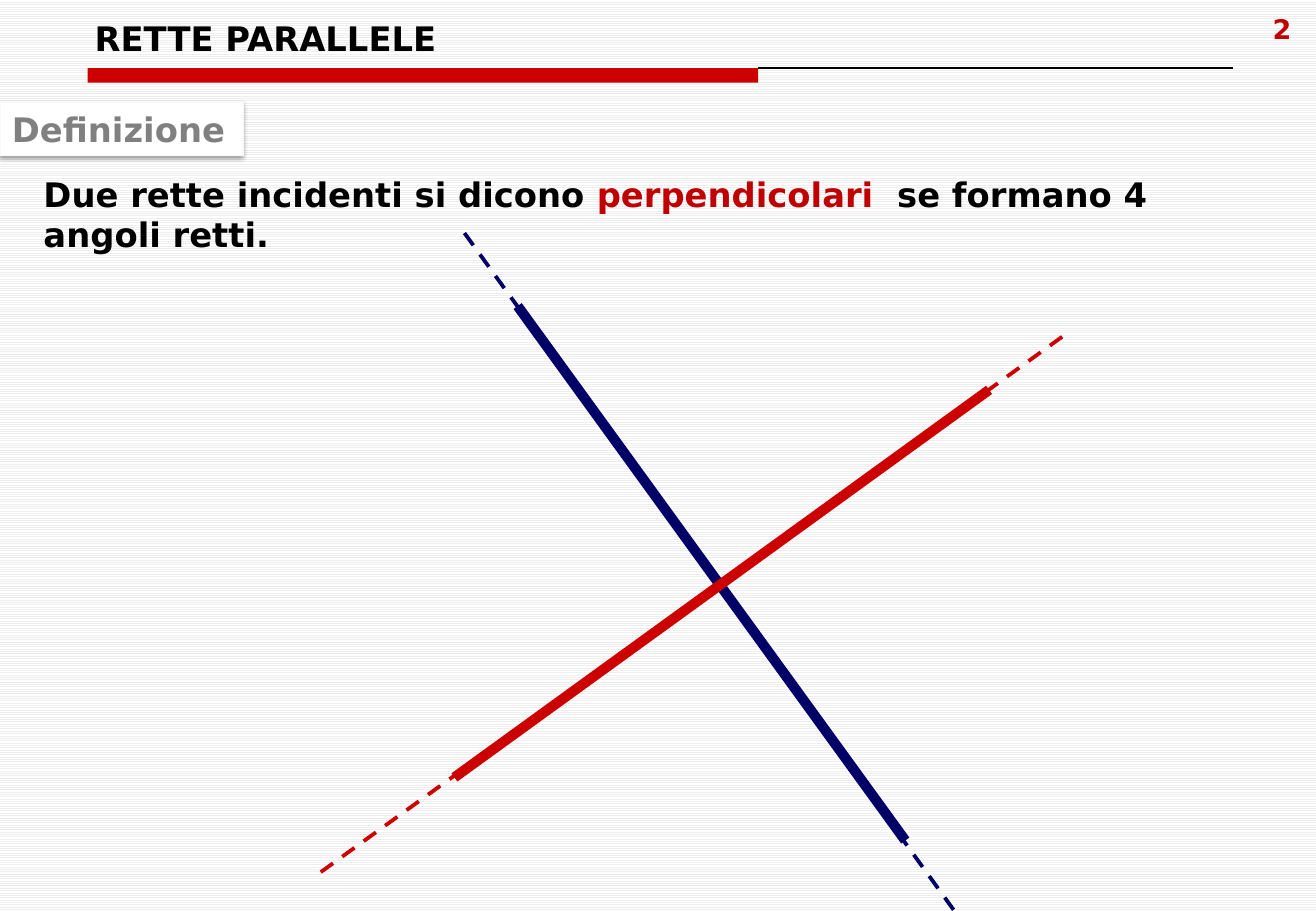
from lxml import etree
from pptx import Presentation
from pptx.dml.color import RGBColor
from pptx.enum.dml import MSO_LINE, MSO_PATTERN
from pptx.enum.shapes import MSO_CONNECTOR, MSO_SHAPE
from pptx.enum.text import MSO_ANCHOR, PP_ALIGN
from pptx.oxml import parse_xml
from pptx.oxml.ns import nsdecls, qn
from pptx.util import Inches, Pt

STRAIGHT = MSO_CONNECTOR.STRAIGHT
RECTANGLE = MSO_SHAPE.RECTANGLE
DASH = MSO_LINE.DASH
TOP, MIDDLE, BOTTOM = MSO_ANCHOR.TOP, MSO_ANCHOR.MIDDLE, MSO_ANCHOR.BOTTOM
LEFT, CENTER = PP_ALIGN.LEFT, PP_ALIGN.CENTER

BLACK = RGBColor(0x00, 0x00, 0x00)
WHITE = RGBColor(0xFF, 0xFF, 0xFF)
STRIPE = RGBColor(0xEE, 0xEE, 0xEE)
EDGE = RGBColor(0xF9, 0xF9, 0xF9)
GRAY = RGBColor(0x80, 0x80, 0x80)
RED = RGBColor(0xCC, 0x00, 0x00)
DARK_RED = RGBColor(0xC0, 0x00, 0x00)
NAVY = RGBColor(0x00, 0x00, 0x66)


def write(shape, runs, size=20, anchor=TOP, align=LEFT):
    """Fill a shape with one bold paragraph of (text, colour) runs."""
    frame = shape.text_frame
    frame.word_wrap = True
    frame.vertical_anchor = anchor
    paragraph = frame.paragraphs[0]
    paragraph.alignment = align
    for text, color in runs:
        run = paragraph.add_run()
        run.text = text
        run.font.name = "DejaVu Sans"
        run.font.size = Pt(size)
        run.font.bold = True
        run.font.color.rgb = color


def draw_line(shapes, start, end, color, width):
    line = shapes.add_connector(STRAIGHT, *map(Inches, start + end))
    line.line.color.rgb = color
    line.line.width = Pt(width)
    etree.SubElement(line._element.spPr, qn("a:effectLst"))
    return line


prs = Presentation()
prs.slide_width, prs.slide_height = Inches(10.83), Inches(7.5)
slide = prs.slides.add_slide(prs.slide_layouts[6])

background = slide.background.fill
background.patterned()
background.pattern = MSO_PATTERN.LIGHT_HORIZONTAL
background.fore_color.rgb = STRIPE
background.back_color.rgb = WHITE

# Header: red bar on a thin rule, slide number and title
rule_left, rule_top = 0.72, 0.56
bar = slide.shapes.add_shape(
    RECTANGLE, *map(Inches, (rule_left, rule_top, 5.52, 0.12)))
bar.shadow.inherit = False
bar.fill.solid()
bar.fill.fore_color.rgb = RED
bar.line.fill.background()
draw_line(slide.shapes, (6.24, rule_top), (10.15, rule_top), BLACK, 0.75)

number = slide.shapes.add_textbox(*map(Inches, (10.18, 0.05, 0.74, 0.52)))
write(number, [("2", DARK_RED)], size=16, align=CENTER)
title = slide.shapes.add_textbox(*map(Inches, (0.68, 0.15, 9.48, 0.38)))
write(title, [("RETTE PARALLELE", BLACK)], anchor=BOTTOM)

# Definition label with a soft shadow below
label = slide.shapes.add_shape(RECTANGLE, *map(Inches, (0, 0.84, 2, 0.44)))
label.shadow.inherit = False
label.fill.solid()
label.fill.fore_color.rgb = WHITE
label.line.color.rgb = EDGE
label.line.width = Pt(0.75)
label._element.spPr.find(qn("a:effectLst")).append(parse_xml(
    f'<a:outerShdw {nsdecls("a")} blurRad="40000" dist="20000" dir="5400000" '
    'rotWithShape="0"><a:srgbClr val="000000"><a:alpha val="38000"/>'
    '</a:srgbClr></a:outerShdw>'))
write(label, [("Definizione", GRAY)], anchor=MIDDLE)

# Each line of the figure: dashed extension, then solid segment
perpendiculars = [
    (NAVY, (8.23, 8.02), (3.78, 1.86), (7.45, 6.92), (4.26, 2.52)),
    (RED, (2.64, 7.18), (8.8, 2.73), (3.74, 6.4), (8.14, 3.21)),
]
for color, far_start, far_end, start, end in perpendiculars:
    group = slide.shapes.add_group_shape()
    extension = draw_line(group.shapes, far_start, far_end, color, 2.25)
    extension.line.dash_style = DASH
    draw_line(group.shapes, start, end, color, 6)

definition = slide.shapes.add_textbox(*map(Inches, (0.26, 1.38, 10.24, 0.77)))
write(definition, [
    ("Due rette incidenti si dicono ", BLACK),
    ("perpendicolari", DARK_RED),
    ("  se formano 4 angoli retti.", BLACK),
])

prs.save("out.pptx")
